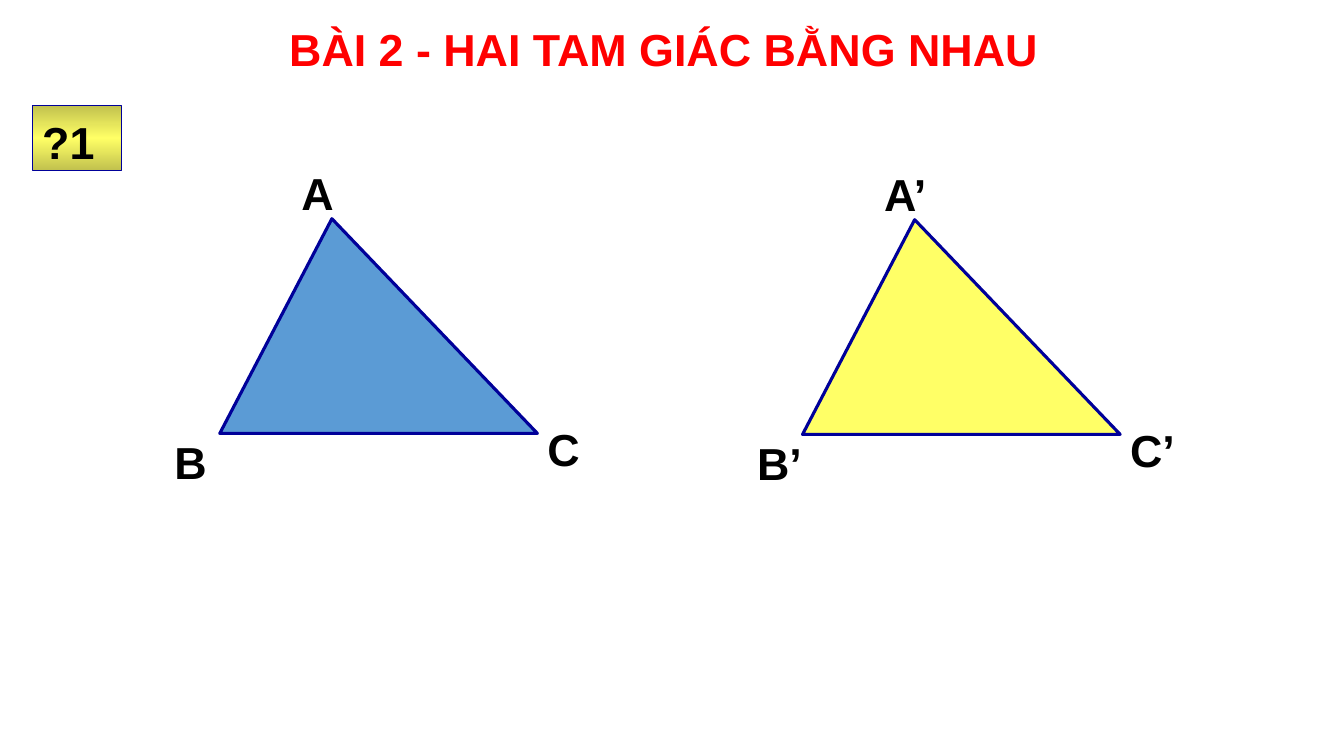
from copy import deepcopy
from pptx import Presentation
from pptx.dml.color import RGBColor
from pptx.enum.shapes import MSO_SHAPE as Shape
from pptx.enum.text import MSO_ANCHOR as Anchor, PP_ALIGN as Align
from pptx.oxml.ns import qn
from pptx.util import Inches, Pt

TITLE = "BÀI 2 - HAI TAM GIÁC BẰNG NHAU"
TAG = "?1"
NAVY = "000099"
SHADES = [(0, "C2C24E"), (0.5, "FFFF66"), (1, "C2C24E")]
FIGURES = [
    (2.18, 2.17, "5B9BD5", [("A", 0.71), ("B", 0.79), ("C", 0.63)]),
    (7.96, 2.18, "FFFF66", [("A’", 0.71), ("B’", 0.79), ("C’", 0.76)]),
]
OFFSETS = [(0.71, -0.62), (-0.55, 2.05), (3.15, 1.92)]


def color(code):
    return RGBColor.from_string(code)


def place(*nums):
    return [Inches(n) for n in nums]


def write(shape, text, code="000000"):
    frame = shape.text_frame
    frame.word_wrap = True
    frame.vertical_anchor = Anchor.TOP
    frame.margin_top = Inches(0.09)
    para = frame.paragraphs[0]
    para.text = text
    para.alignment = Align.LEFT
    font = para.font
    font.name, font.size, font.bold = "Arial", Pt(32), True
    font.color.rgb = color(code)


def edge(shape, width):
    shape.shadow.inherit = False
    shape.line.color.rgb = color(NAVY)
    shape.line.width = Pt(width)


def shade(shape):
    fill = shape.fill
    fill.gradient()
    fill.gradient_angle = 90
    stops = shape._element.spPr.find(qn("a:gradFill")).find(qn("a:gsLst"))
    stops.append(deepcopy(stops[-1]))
    for stop, (pos, code) in zip(fill.gradient_stops, SHADES):
        stop.position = pos
        stop.color.rgb = color(code)


def draw(slide, left, top, code, labels):
    group = slide.shapes.add_group_shape()
    tri = group.shapes.add_shape(Shape.ISOSCELES_TRIANGLE, *place(left, top, 3.15, 2.13))
    tri.adjustments[0] = 0.353
    tri.fill.solid()
    tri.fill.fore_color.rgb = color(code)
    edge(tri, 2.25)
    for (text, width), (dx, dy) in zip(labels, OFFSETS):
        write(group.shapes.add_textbox(*place(left + dx, top + dy, width, 0.64)), text)


def main():
    deck = Presentation()
    deck.slide_width, deck.slide_height = place(13.33, 7.5)
    slide = deck.slides.add_slide(deck.slide_layouts[6])
    write(slide.shapes.add_textbox(*place(2.77, 0.13, 8.66, 0.63)), TITLE, "FF0000")
    tag = slide.shapes.add_shape(Shape.RECTANGLE, *place(0.32, 1.05, 0.89, 0.64))
    shade(tag)
    edge(tag, 0.75)
    write(tag, TAG)
    for figure in FIGURES:
        draw(slide, *figure)
    deck.save("out.pptx")


if __name__ == "__main__":
    main()
